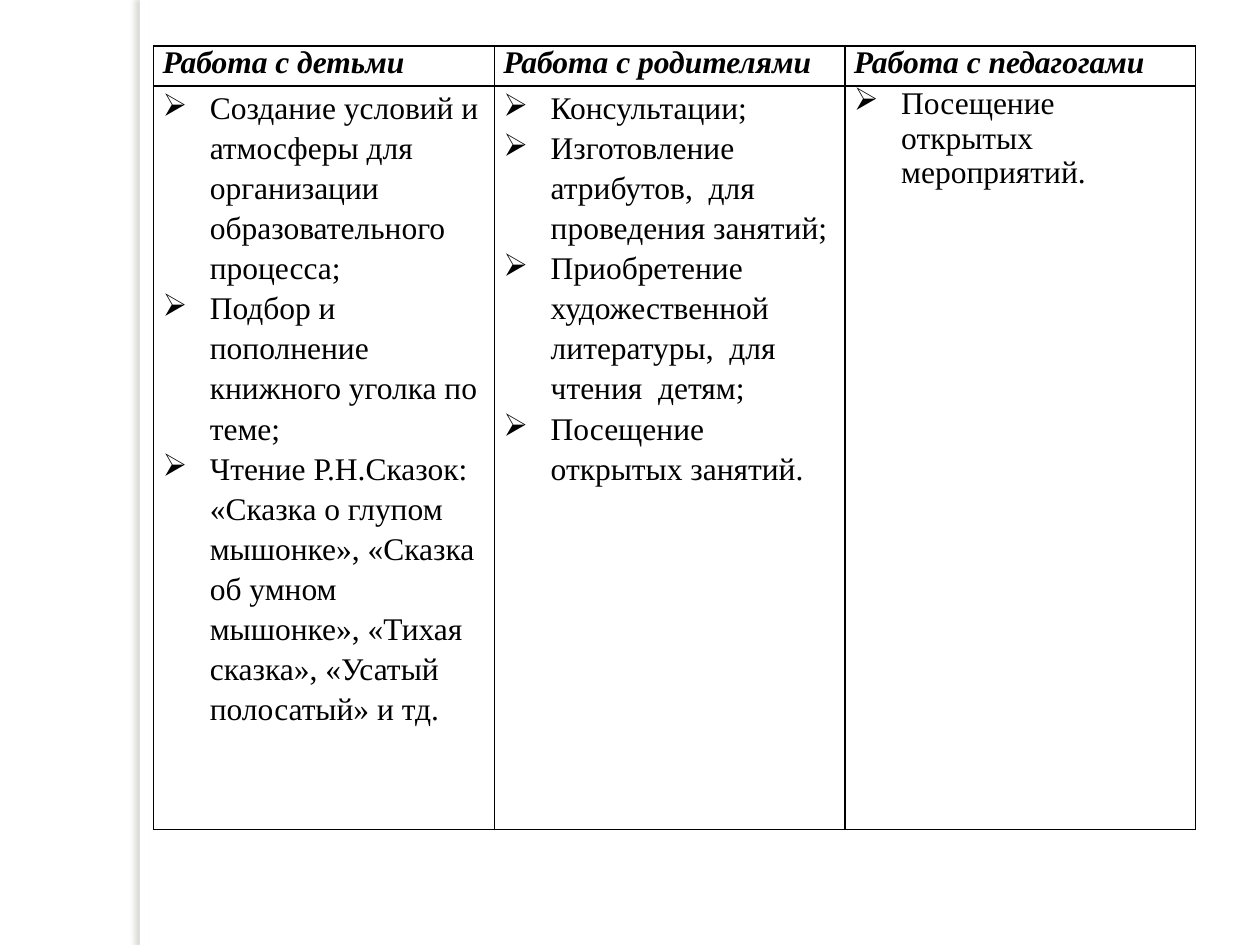
from lxml import etree
from pptx import Presentation
from pptx.dml.color import RGBColor
from pptx.enum import shapes
from pptx.oxml import parse_xml
from pptx.oxml.ns import nsdecls, qn
from pptx.util import Pt

COLORS = {"paper": "FFFFFF", "ink": "000000", "shade": "736F63"}
FONT = "Times New Roman"
INDENT = Pt(27)
COLUMN_WIDTHS = (194.8, 200.3, 200.3)
ROW_HEIGHTS = (23, 424.8)

# heading, line spacing of its list, list items
WORK_AREAS = [
    ("Работа с детьми", 1.15, [
        "Создание условий и атмосферы для организации образовательного процесса;",
        "Подбор и пополнение книжного уголка по теме;",
        "Чтение Р.Н.Сказок: «Сказка о глупом мышонке», «Сказка об умном мышонке», "
        "«Тихая сказка», «Усатый полосатый» и тд.",
    ]),
    ("Работа с родителями", 1.15, [
        "Консультации;",
        "Изготовление атрибутов,  для проведения занятий;",
        "Приобретение художественной литературы,  для чтения  детям;",
        "Посещение открытых занятий.",
    ]),
    ("Работа с педагогами", 1.0, ["Посещение открытых мероприятий."]),
]


def color(name):
    return RGBColor.from_string(COLORS[name])


def add_margin_strip(slide):
    """Narrow white strip casting a soft shadow onto the left margin."""
    strip = slide.shapes.add_shape(
        shapes.MSO_SHAPE.RECTANGLE, Pt(80), Pt(0), Pt(5.5), Pt(540))
    strip.fill.solid()
    strip.fill.fore_color.rgb = color("paper")
    strip.line.fill.background()
    strip.shadow.inherit = False
    effects = strip._element.spPr.find(qn("a:effectLst"))
    effects.append(parse_xml(
        f'<a:outerShdw {nsdecls("a")} blurRad="{Pt(3)}" dist="{Pt(3)}" dir="10800000">'
        f'<a:srgbClr val="{COLORS["shade"]}"><a:alpha val="25000"/></a:srgbClr>'
        '</a:outerShdw>'))


def add_borders(cell):
    properties = cell._tc.get_or_add_tcPr()
    for position, side in enumerate(("lnL", "lnR", "lnT", "lnB")):
        properties.insert(position, parse_xml(
            f'<a:{side} {nsdecls("a")} w="{Pt(1)}"><a:solidFill>'
            f'<a:srgbClr val="{COLORS["ink"]}"/></a:solidFill></a:{side}>'))


def add_arrow_bullet(paragraph):
    properties = paragraph._p.get_or_add_pPr()
    properties.set("marL", str(INDENT))
    properties.set("indent", str(-INDENT))
    etree.SubElement(properties, qn("a:buChar")).set("char", "➢")


def fill_cell(cell, lines, heading=False, spacing=1.0):
    cell.fill.background()
    add_borders(cell)
    cell.margin_left = cell.margin_right = Pt(5.2)
    cell.margin_top = cell.margin_bottom = Pt(0)
    cell.text_frame.text = "\n".join(lines)
    for paragraph in cell.text_frame.paragraphs:
        if not heading:
            add_arrow_bullet(paragraph)
        if spacing != 1.0:
            paragraph.line_spacing = spacing
        for run in paragraph.runs:
            run.font.name = FONT
            run.font.size = Pt(18)
            run.font.bold = run.font.italic = heading
            run.font.color.rgb = color("ink")


def add_work_table(slide):
    table = slide.shapes.add_table(
        len(ROW_HEIGHTS), len(WORK_AREAS), Pt(87.7), Pt(26.2),
        Pt(sum(COLUMN_WIDTHS)), Pt(sum(ROW_HEIGHTS))).table
    table.first_row = table.horz_banding = False
    for row, height in zip(table.rows, ROW_HEIGHTS):
        row.height = Pt(height)
    for index, (heading, spacing, items) in enumerate(WORK_AREAS):
        table.columns[index].width = Pt(COLUMN_WIDTHS[index])
        fill_cell(table.cell(0, index), [heading], heading=True)
        fill_cell(table.cell(1, index), items, spacing=spacing)


def main():
    deck = Presentation()
    deck.slide_width, deck.slide_height = Pt(720), Pt(540)
    slide = deck.slides.add_slide(deck.slide_layouts[6])
    slide.background.fill.solid()
    slide.background.fill.fore_color.rgb = color("paper")
    add_margin_strip(slide)
    add_work_table(slide)
    deck.save("out.pptx")


if __name__ == "__main__":
    main()
